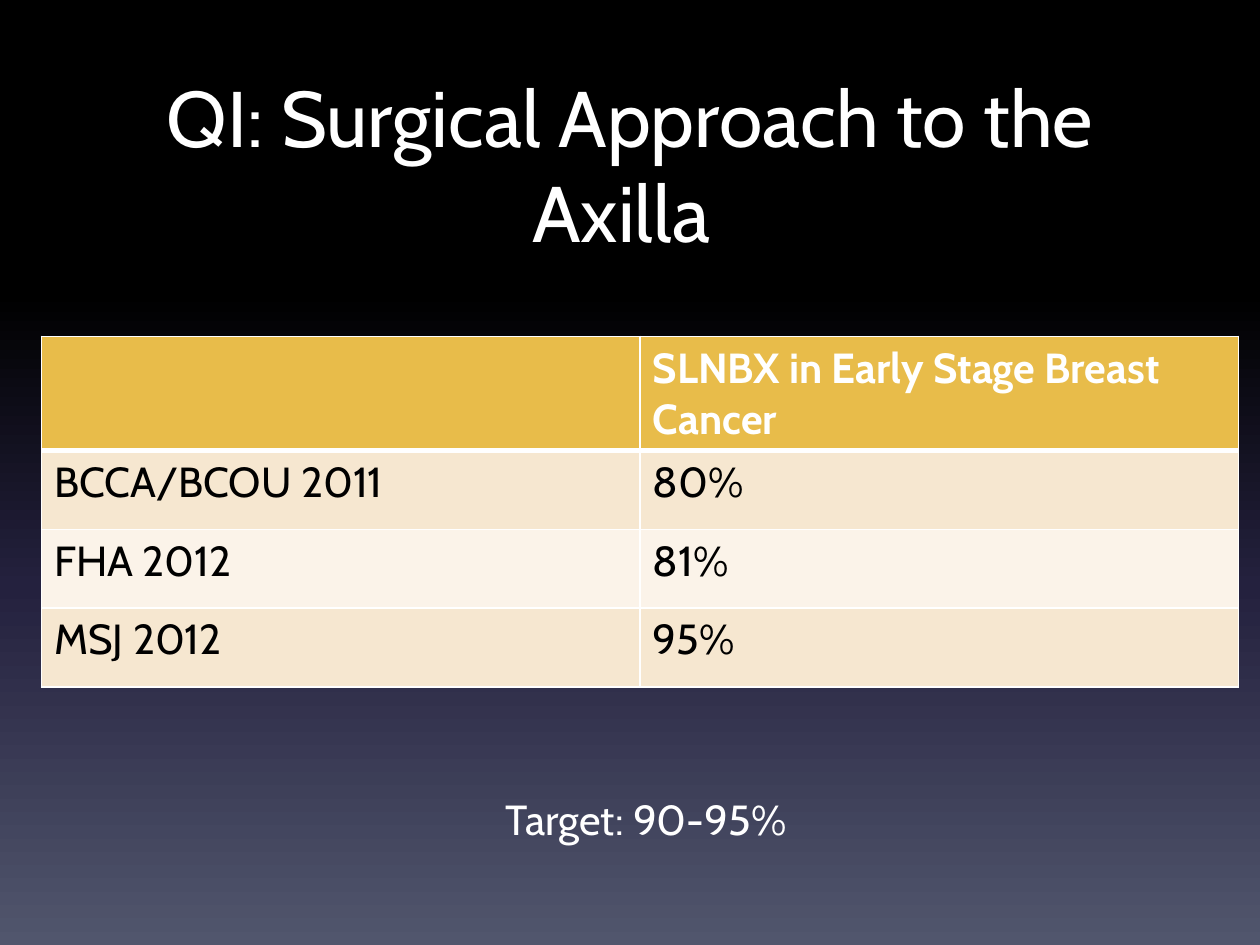
from lxml.etree import SubElement
from pptx import Presentation
from pptx.dml.color import RGBColor
from pptx.enum.text import MSO_ANCHOR, PP_ALIGN
from pptx.oxml import parse_xml
from pptx.oxml.ns import nsdecls, qn
from pptx.util import Cm, Pt

FONT = "Cabin"
WHITE = RGBColor(0xFF, 0xFF, 0xFF)
BLACK = RGBColor(0x00, 0x00, 0x00)
GOLD = RGBColor(0xE8, 0xBC, 0x4A)
SAND = RGBColor(0xF6, 0xE7, 0xD0)
CREAM = RGBColor(0xFB, 0xF3, 0xE9)
NAVY = RGBColor(0x24, 0x21, 0x3E)
SLATE = RGBColor(0x51, 0x56, 0x6D)

BACKGROUND_STOPS = [(0, BLACK), (31, BLACK), (62, NAVY), (100, SLATE)]
ROWS = [
    ("", "SLNBX in Early Stage Breast Cancer"),
    ("BCCA/BCOU 2011", "80%"),
    ("FHA 2012", "81%"),
    ("MSJ 2012", "95%"),
]
HEADER_HEIGHT = 2.3
ROW_HEIGHT = 1.59


def write_text(text_frame, text, size=24, color=WHITE, bold=False, align=PP_ALIGN.LEFT):
    text_frame.word_wrap = True
    paragraph = text_frame.paragraphs[0]
    paragraph.alignment = align
    run = paragraph.add_run()
    run.text = text
    run.font.name = FONT
    run.font.size = Pt(size)
    run.font.bold = bold
    run.font.color.rgb = color


def paint_background(slide):
    stops = "".join(
        f'<a:gs pos="{position * 1000}"><a:srgbClr val="{color}"/></a:gs>'
        for position, color in BACKGROUND_STOPS
    )
    background = parse_xml(
        f'<p:bg {nsdecls("p", "a")}><p:bgPr><a:gradFill rotWithShape="1">'
        f'<a:gsLst>{stops}</a:gsLst><a:lin ang="5400000" scaled="0"/>'
        f"</a:gradFill><a:effectLst/></p:bgPr></p:bg>"
    )
    slide.element.cSld.insert(0, background)


def add_centred_text(slide, left, top, width, height, text, **text_format):
    box = slide.shapes.add_textbox(Cm(left), Cm(top), Cm(width), Cm(height))
    box.text_frame.vertical_anchor = MSO_ANCHOR.TOP
    write_text(box.text_frame, text, align=PP_ALIGN.CENTER, **text_format)


def format_cell(cell, fill, bottom_width):
    """Set the fill and white borders; borders must precede the fill in the XML."""
    properties = cell._tc.get_or_add_tcPr()
    for side, width in (("L", 1), ("R", 1), ("T", 1), ("B", bottom_width)):
        line = SubElement(properties, qn(f"a:ln{side}"), w=str(Pt(width)))
        solid = SubElement(line, qn("a:solidFill"))
        SubElement(solid, qn("a:srgbClr"), val=str(WHITE))
    cell.fill.solid()
    cell.fill.fore_color.rgb = fill


def add_results_table(slide, left, top, width):
    height = HEADER_HEIGHT + ROW_HEIGHT * (len(ROWS) - 1)
    table = slide.shapes.add_table(
        len(ROWS), len(ROWS[0]), Cm(left), Cm(top), Cm(width), Cm(height)
    ).table
    for row_index, texts in enumerate(ROWS):
        is_header = row_index == 0
        table.rows[row_index].height = Cm(HEADER_HEIGHT if is_header else ROW_HEIGHT)
        fill = GOLD if is_header else (SAND if row_index % 2 else CREAM)
        # The thick rule below the header is also the top of the first body row.
        for column_index, text in enumerate(texts):
            cell = table.cell(row_index, column_index)
            format_cell(cell, fill, bottom_width=3 if is_header else 1)
            if row_index == 1:
                cell._tc.tcPr.find(qn("a:lnT")).set("w", str(Pt(3)))
            if text:
                write_text(cell.text_frame, text, bold=is_header,
                           color=WHITE if is_header else BLACK)


def main():
    presentation = Presentation()
    presentation.slide_width = Cm(25.4)
    presentation.slide_height = Cm(19.05)
    slide = presentation.slides.add_slide(presentation.slide_layouts[6])
    paint_background(slide)
    add_centred_text(slide, 1.27, 1.27, 22.86, 3.18,
                     "QI: Surgical Approach to the Axilla ", size=45)
    add_results_table(slide, 0.84, 6.78, 24.13)
    add_centred_text(slide, 9.53, 15.88, 6.99, 1.27, "Target: 90-95%")
    presentation.save("out.pptx")


if __name__ == "__main__":
    main()
